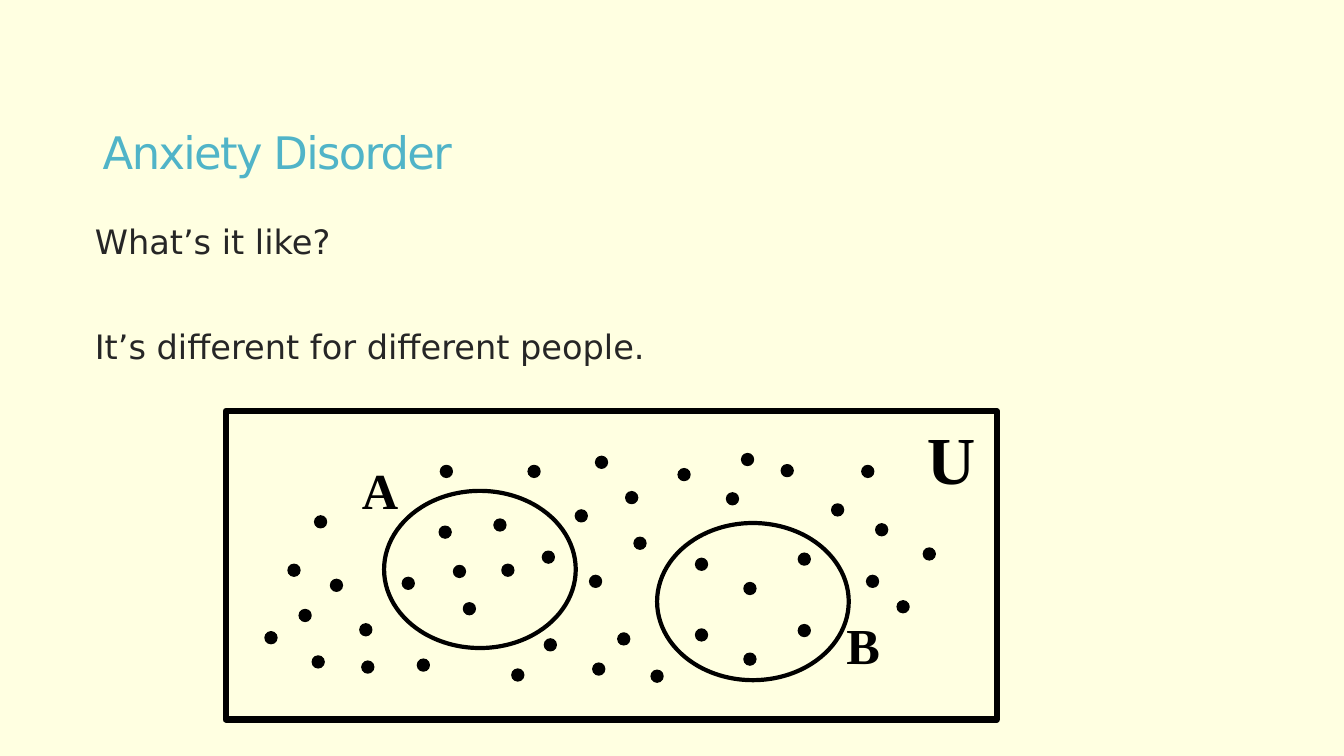
from pptx import Presentation
from pptx.dml.color import RGBColor
from pptx.enum.shapes import MSO_SHAPE
from pptx.enum.text import MSO_ANCHOR
from pptx.util import Cm, Pt

RECT, OVAL = MSO_SHAPE.RECTANGLE, MSO_SHAPE.OVAL
MIDDLE = MSO_ANCHOR.MIDDLE

COLORS = {"background": "FFFFE1", "title": "50B4C8", "body": "262626", "ink": "000000"}
SANS, SERIF = "DejaVu Sans", "Times New Roman"

# Lengths in cm; diagram parts are offsets from the universe's corner
DOT = 0.3
SET_SIZE = (4.83, 3.96)
SETS = {"A": (3.99, 2.01), "B": (10.87, 2.82)}
LABELS = [  # text, left, top, width, height, points
    ("U", 17.42, 0.03, 1.75, 2.31, 48),
    ("A", 3.18, 1.09, 1.45, 1.8, 36),
    ("B", 15.39, 5.0, 1.37, 1.8, 36),
]
DOTS_IN_A = [
    (5.38, 2.9), (6.76, 2.72), (7.98, 3.53), (6.96, 3.86),
    (5.74, 3.89), (4.45, 4.19), (5.99, 4.83),
]
DOTS_IN_B = [
    (11.84, 3.71), (14.43, 3.58), (13.06, 4.32),
    (11.84, 5.49), (14.43, 5.38), (13.06, 6.1),
]
DOTS_OUTSIDE = [
    (0.99, 5.56), (1.57, 3.86), (1.85, 5.0), (2.18, 6.17), (2.24, 2.64),
    (2.64, 4.24), (3.38, 5.36), (3.43, 6.3), (4.83, 6.25), (5.41, 1.37),
    (7.21, 6.5), (7.62, 1.37), (8.03, 5.74), (8.81, 2.49), (9.17, 4.14),
    (9.25, 6.35), (9.32, 1.14), (9.88, 5.59), (10.08, 2.03), (10.29, 3.18),
    (10.72, 6.53), (11.4, 1.45), (12.62, 2.06), (13.0, 1.07), (14.0, 1.35),
    (15.27, 2.34), (16.03, 1.37), (16.15, 4.14), (16.38, 2.84),
    (16.92, 4.78), (17.58, 3.45),
]


def rgb(name):
    return RGBColor.from_string(COLORS[name])


def add_text(slide, box, lines, font, size, color, wrap=True):
    sp = slide.shapes.add_textbox(*map(Cm, box))
    tf = sp.text_frame
    tf.word_wrap = wrap
    tf.text = "\n".join(lines)
    for p in tf.paragraphs:
        p.font.name = font
        p.font.size = Pt(size)
        p.font.color.rgb = rgb(color)
    return tf


def add_outline(slide, kind, box, weight, filled=False):
    sp = slide.shapes.add_shape(kind, *map(Cm, box))
    sp.shadow.inherit = False
    if filled:
        sp.fill.solid()
        sp.fill.fore_color.rgb = rgb("ink")
    else:
        sp.fill.background()
    sp.line.color.rgb = rgb("ink")
    sp.line.width = Pt(weight)


def add_title(slide, box):
    tf = add_text(slide, box, ["Anxiety Disorder"], SANS, 32, "title")
    tf.vertical_anchor = MIDDLE
    p = tf.paragraphs[0]
    p.line_spacing = 0.85
    # Tighter letter spacing, in hundredths of a point
    p.runs[0].font._element.set("spc", "-120")


def add_body(slide, box):
    lines = ["What’s it like?", "It’s different for different people."]
    tf = add_text(slide, box, lines, SANS, 24, "body")
    tf.margin_left = Cm(0.51)
    for p in tf.paragraphs:
        p.line_spacing = 0.85
    tf.paragraphs[1].space_before = Pt(51)


def add_venn(slide, box):
    left, top = box[:2]
    # Universe and its two sets
    add_outline(slide, RECT, box, 4.5)
    for x, y in SETS.values():
        add_outline(slide, OVAL, (left + x, top + y, *SET_SIZE), 3)
    # Elements
    for x, y in DOTS_IN_A + DOTS_IN_B + DOTS_OUTSIDE:
        add_outline(slide, OVAL, (left + x, top + y, DOT, DOT), 1, filled=True)
    # Labels
    for text, x, y, w, h, size in LABELS:
        tf = add_text(slide, (left + x, top + y, w, h), [text], SERIF, size, "ink", wrap=False)
        tf.paragraphs[0].font.bold = True


def main():
    prs = Presentation()
    prs.slide_width, prs.slide_height = Cm(33.87), Cm(19.05)
    s = prs.slides.add_slide(prs.slide_layouts[6])
    s.background.fill.solid()
    s.background.fill.fore_color.rgb = rgb("background")
    add_title(s, (2.34, 2.13, 29.64, 3.58))
    add_body(s, (1.88, 5.59, 29.87, 10.46))
    add_venn(s, (5.69, 10.36, 19.43, 7.77))
    prs.save("out.pptx")


if __name__ == "__main__":
    main()
